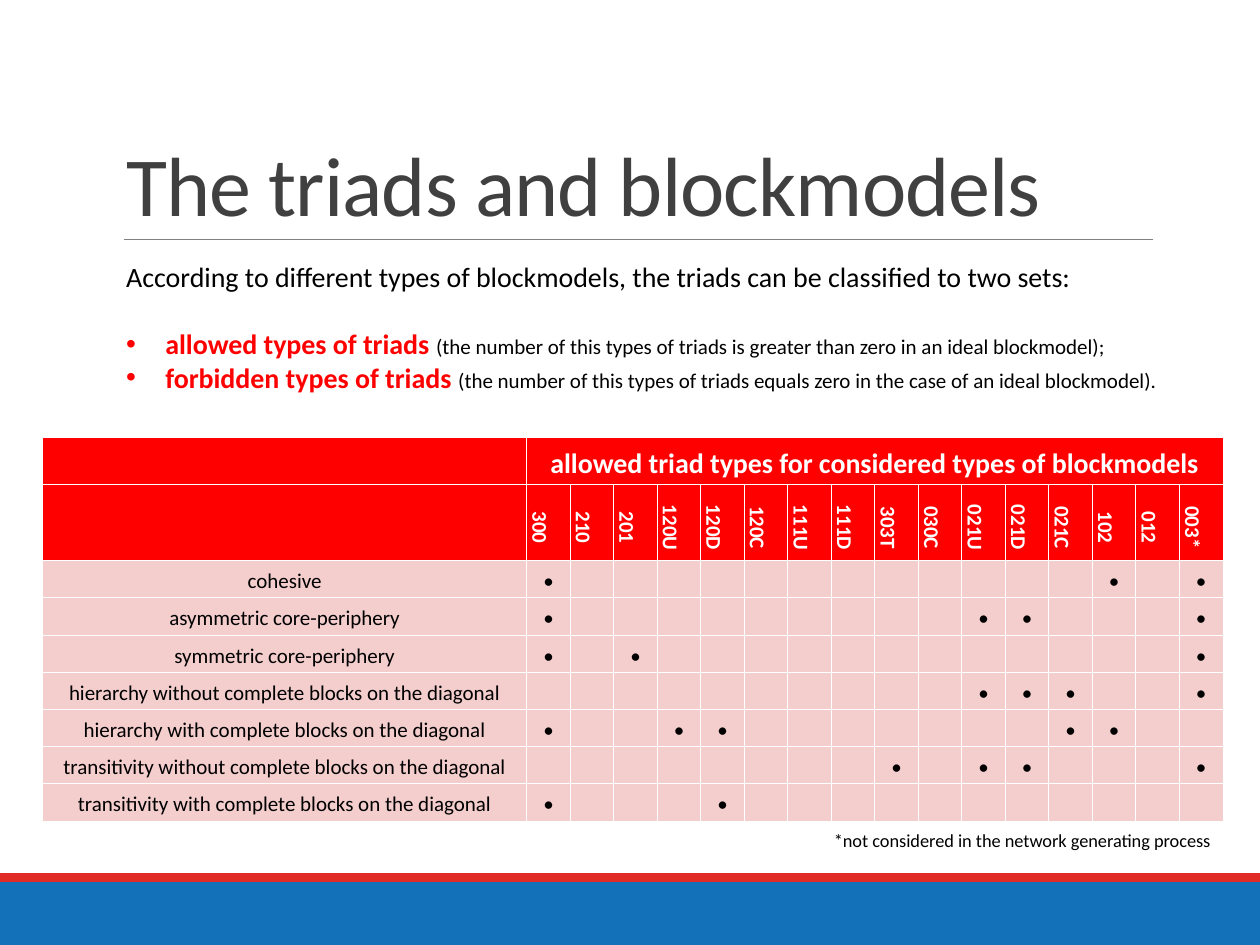
from dataclasses import dataclass

from lxml import etree
from pptx import Presentation
from pptx import util as u
from pptx.dml.color import RGBColor
from pptx.enum import shapes, text
from pptx.oxml import ns


@dataclass(frozen=True)
class Theme:
    font: str = "Calibri"
    black: str = "000000"
    white: str = "FFFFFF"
    title: str = "404040"
    rule: str = "808080"
    accent: str = "FF0000"
    tint: str = "F4CDCD"
    band: str = "1271B9"
    stripe: str = "E12B26"
    title_size: float = 48
    body_size: float = 16
    small_size: float = 12
    note_size: float = 10.5


THEME = Theme()
INTRO = "According to different types of blockmodels, the triads can be classified to two sets:"
TRIAD_SETS = [
    ("allowed types of triads ",
     "(the number of this types of triads is greater than zero in an ideal blockmodel);"),
    ("forbidden types of triads ",
     "(the number of this types of triads equals zero in the case of an ideal blockmodel)."),
]
TABLE_HEADING = "allowed triad types for considered types of blockmodels"
TRIADS = ["300", "210", "201", "120U", "120D", "120C", "111U", "111D",
          "303T", "030C", "021U", "021D", "021C", "102", "012", "003*"]
BLOCKMODELS = {
    "cohesive": ["300", "102", "003*"],
    "asymmetric core-periphery": ["300", "021U", "021D", "003*"],
    "symmetric core-periphery": ["300", "201", "003*"],
    "hierarchy without complete blocks on the diagonal": ["021U", "021D", "021C", "003*"],
    "hierarchy with complete blocks on the diagonal": ["300", "120U", "120D", "021C", "102"],
    "transitivity without complete blocks on the diagonal": ["303T", "021U", "021D", "003*"],
    "transitivity with complete blocks on the diagonal": ["300", "120D"],
}


def place(shape, box):
    shape.left, shape.top, shape.width, shape.height = map(u.Cm, box)


def style(font, size, color, bold=False):
    font.name = THEME.font
    font.size = u.Pt(size)
    font.bold = bold
    font.color.rgb = RGBColor.from_string(color)


def add_title(slide, box):
    title = slide.shapes.title
    place(title, box)
    frame = title.text_frame
    frame.text = "The triads and blockmodels"
    frame.vertical_anchor = text.MSO_ANCHOR.BOTTOM
    frame.auto_size = text.MSO_AUTO_SIZE.NONE
    paragraph = frame.paragraphs[0]
    paragraph.alignment = text.PP_ALIGN.LEFT
    paragraph.line_spacing = 0.85
    style(paragraph.font, THEME.title_size, THEME.title)
    paragraph.runs[0].font._element.set("spc", "-50")

    left, top, width, height = box
    rule = slide.shapes.add_connector(
        shapes.MSO_CONNECTOR.STRAIGHT,
        *map(u.Cm, (left + 0.2, top + height, left + width, top + height)))
    rule.line.color.rgb = RGBColor.from_string(THEME.rule)
    rule.line.width = u.Pt(0.5)
    etree.SubElement(rule._element.spPr, ns.qn("a:effectLst"))


def set_bullet(paragraph, character, indent):
    properties = paragraph._p.get_or_add_pPr()
    properties.set("marL", str(u.Cm(indent)))
    properties.set("indent", str(-u.Cm(indent)))
    if character:
        color = etree.SubElement(properties, ns.qn("a:buClr"))
        etree.SubElement(color, ns.qn("a:srgbClr"), val=THEME.accent)
        etree.SubElement(properties, ns.qn("a:buFont"), typeface="Arial")
        etree.SubElement(properties, ns.qn("a:buChar"), char=character)
    else:
        etree.SubElement(properties, ns.qn("a:buNone"))


def add_triad_sets(slide, box):
    body = slide.placeholders[1]
    place(body, box)
    frame = body.text_frame
    frame.auto_size = text.MSO_AUTO_SIZE.NONE
    intro = frame.paragraphs[0]
    intro.alignment = text.PP_ALIGN.JUSTIFY
    intro.space_before = u.Pt(0)
    intro.space_after = u.Pt(THEME.body_size * 1.2)
    set_bullet(intro, None, 0)
    run = intro.add_run()
    run.text = INTRO
    style(run.font, THEME.body_size, THEME.black)
    for name, meaning in TRIAD_SETS:
        paragraph = frame.add_paragraph()
        paragraph.alignment = text.PP_ALIGN.JUSTIFY
        paragraph.space_before = u.Pt(0)
        set_bullet(paragraph, "•", 0.79)
        run = paragraph.add_run()
        run.text = name
        style(run.font, THEME.body_size, THEME.accent, True)
        run = paragraph.add_run()
        run.text = meaning
        style(run.font, THEME.small_size, THEME.black)


def fill_cell(cell, content, fill, size, color, bold=False, vertical=False):
    cell.margin_left = cell.margin_right = cell.margin_top = cell.margin_bottom = 0
    cell.vertical_anchor = text.MSO_ANCHOR.MIDDLE
    paragraph = cell.text_frame.paragraphs[0]
    paragraph.alignment = text.PP_ALIGN.CENTER
    paragraph.line_spacing = 1.19
    paragraph.space_after = u.Pt(6)
    style(paragraph.font, size, color, bold)
    if content:
        run = paragraph.add_run()
        run.text = content
        style(run.font, size, color, bold)
    else:
        etree.SubElement(paragraph._p, ns.qn("a:endParaRPr"), sz=str(size * 100))
    properties = cell._tc.get_or_add_tcPr()
    if vertical:
        properties.set("vert", "vert")
        paragraph._p.get_or_add_pPr().set("marL", str(u.Cm(0.2)))
    for side in ("lnL", "lnR", "lnT", "lnB"):
        line = etree.SubElement(properties, ns.qn(f"a:{side}"), w=str(u.Pt(0.5)))
        solid = etree.SubElement(line, ns.qn("a:solidFill"))
        etree.SubElement(solid, ns.qn("a:srgbClr"), val=THEME.white)
    cell.fill.solid()
    cell.fill.fore_color.rgb = RGBColor.from_string(fill)


def add_triad_table(slide, box):
    label_width = 9.76
    heights = [0.95, 1.53] + [0.75] * len(BLOCKMODELS)
    table = slide.shapes.add_table(
        len(heights), len(TRIADS) + 1, *map(u.Cm, box)).table
    table.horz_banding = False
    triad_width = (box[2] - label_width) / len(TRIADS)
    for column, width in zip(table.columns, [label_width] + [triad_width] * len(TRIADS)):
        column.width = u.Cm(width)
    for row, height in zip(table.rows, heights):
        row.height = u.Cm(height)

    headings = [["", TABLE_HEADING] + [""] * (len(TRIADS) - 1), [""] + TRIADS]
    for row, contents in enumerate(headings):
        size = (THEME.body_size, THEME.small_size)[row]
        for column, content in enumerate(contents):
            fill_cell(table.cell(row, column), content, THEME.accent, size,
                      THEME.white, True, vertical=row == 1 and column > 0)
    table.cell(0, 1).merge(table.cell(0, len(TRIADS)))

    for row, (name, allowed) in enumerate(BLOCKMODELS.items(), len(headings)):
        contents = [name] + ["•" if triad in allowed else "" for triad in TRIADS]
        for column, content in enumerate(contents):
            fill_cell(table.cell(row, column), content, THEME.tint,
                      THEME.small_size, THEME.black)


def add_footnote(slide, box):
    frame = slide.shapes.add_textbox(*map(u.Cm, box)).text_frame
    frame.word_wrap = False
    paragraph = frame.paragraphs[0]
    paragraph.text = "*not considered in the network generating process"
    paragraph.alignment = text.PP_ALIGN.RIGHT
    style(paragraph.font, THEME.note_size, THEME.black)


def add_footer(slide, box):
    left, top, width, height = box
    stripe_height = 0.18
    for color, y, part_height in (
            (THEME.band, top + stripe_height, height - stripe_height),
            (THEME.stripe, top, stripe_height)):
        bar = slide.shapes.add_shape(
            shapes.MSO_SHAPE.RECTANGLE, *map(u.Cm, (left, y, width, part_height)))
        bar.shadow.inherit = False
        bar.fill.solid()
        bar.fill.fore_color.rgb = RGBColor.from_string(color)
        bar.line.fill.background()


def main():
    presentation = Presentation()
    presentation.slide_width, presentation.slide_height = u.Cm(25.4), u.Cm(19.05)
    slide = presentation.slides.add_slide(presentation.slide_layouts[1])
    add_footer(slide, (0, 17.6, 25.4, 1.45))
    add_title(slide, (2.29, 0.79, 20.95, 4.04))
    add_triad_table(slide, (0.86, 8.82, 23.8, 7.73))
    add_footnote(slide, (16.41, 16.59, 8.25, 0.71))
    add_triad_sets(slide, (2.29, 5.11, 22.1, 3))
    presentation.save("out.pptx")


if __name__ == "__main__":
    main()
